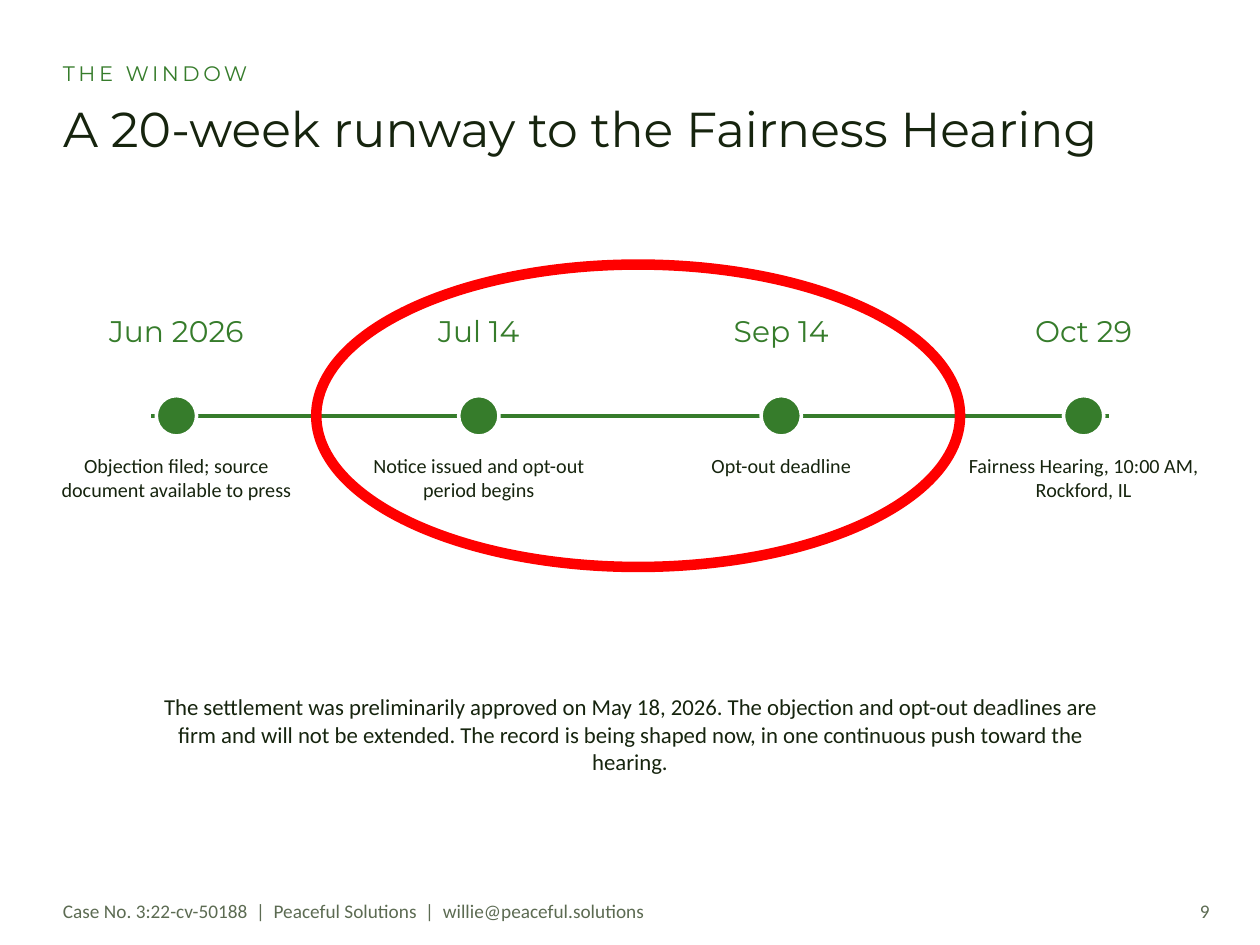
from pptx import Presentation
from pptx.dml.color import RGBColor
from pptx.enum.shapes import MSO_CONNECTOR, MSO_SHAPE
from pptx.enum.text import MSO_ANCHOR, MSO_AUTO_SIZE, PP_ALIGN
from pptx.oxml.ns import qn
from pptx.util import Inches, Pt
from lxml import etree

LEFT, CENTER, RIGHT = PP_ALIGN.LEFT, PP_ALIGN.CENTER, PP_ALIGN.RIGHT
TOP, MIDDLE = MSO_ANCHOR.TOP, MSO_ANCHOR.MIDDLE
OVAL = MSO_SHAPE.OVAL
STRAIGHT = MSO_CONNECTOR.STRAIGHT
NO_AUTOFIT = MSO_AUTO_SIZE.NONE

HEAD_FONT, BODY_FONT = "Montserrat", "Calibri"
GREEN, INK, MUTED = "367C2B", "16240E", "5C6B52"
WHITE, RED = "FFFFFF", "FF0000"

# Timeline geometry in inches
FIRST_X, STEP, AXIS_Y, DOT = 1.4, 2.4, 3.3, 0.32
MILESTONES = [
    ("Jun 2026", "Objection filed; source document available to press"),
    ("Jul 14", "Notice issued and opt-out period begins"),
    ("Sep 14", "Opt-out deadline"),
    ("Oct 29", "Fairness Hearing, 10:00 AM, Rockford, IL"),
]


def color(value):
    return RGBColor.from_string(value)


def set_text(s, text, size, font, ink, align=LEFT, anchor=TOP):
    tf = s.text_frame
    tf.word_wrap = True
    tf.auto_size = NO_AUTOFIT
    tf.vertical_anchor = anchor
    tf.margin_left = tf.margin_right = tf.margin_top = tf.margin_bottom = 0
    p = tf.paragraphs[0]
    p.text = text
    p.alignment = align
    p.font.size = Pt(size)
    p.font.name = font
    p.font.color.rgb = color(ink)
    return p


def add_text(sp, x, y, w, h, *args, **kwargs):
    s = sp.add_textbox(Inches(x), Inches(y), Inches(w), Inches(h))
    return set_text(s, *args, **kwargs)


def add_oval(sp, x, y, w, h, line, width, fill=None):
    s = sp.add_shape(OVAL, Inches(x), Inches(y), Inches(w), Inches(h))
    s.shadow.inherit = False
    if fill:
        s.fill.solid()
        s.fill.fore_color.rgb = color(fill)
    else:
        s.fill.background()
    s.line.color.rgb = color(line)
    s.line.width = Pt(width)


def add_axis(sp, x1, x2, y):
    s = sp.add_connector(STRAIGHT, Inches(x1), Inches(y), Inches(x2), Inches(y))
    s.line.color.rgb = color(GREEN)
    s.line.width = Pt(2.5)
    etree.SubElement(s._element.spPr, qn("a:effectLst"))


def add_milestone(sp, x, date, event):
    add_oval(sp, x - DOT / 2, AXIS_Y - DOT / 2, DOT, DOT, WHITE, 2, GREEN)
    add_text(sp, x - 1, 2.35, 2, 0.55, date, 17, HEAD_FONT, GREEN, CENTER, MIDDLE)
    add_text(sp, x - 1.05, 3.6, 2.1, 1.2, event, 11.5, BODY_FONT, INK, CENTER)


def main():
    prs = Presentation()
    prs.slide_width, prs.slide_height = Inches(10), Inches(7.5)
    slide = prs.slides.add_slide(prs.slide_layouts[5])
    sp = slide.shapes

    # Heading
    p = add_text(sp, 0.5, 0.42, 9, 0.32, "THE WINDOW", 12, HEAD_FONT, GREEN, anchor=MIDDLE)
    p.runs[0].font._element.set("spc", "200")
    title = sp.title
    title.left, title.top = Inches(0.5), Inches(0.78)
    title.width, title.height = Inches(9), Inches(0.9)
    set_text(title, "A 20-week runway to the Fairness Hearing", 28, HEAD_FONT, INK)

    # Timeline
    add_axis(sp, 1.2, 8.8, AXIS_Y)
    for i, (date, event) in enumerate(MILESTONES):
        add_milestone(sp, FIRST_X + i * STEP, date, event)

    # Closing statement
    add_text(sp, 1.2, 5.5, 7.6, 1,
             "The settlement was preliminarily approved on May 18, 2026. "
             "The objection and opt-out deadlines are firm and will not be extended. "
             "The record is being shaped now, in one continuous push toward the hearing.",
             13, BODY_FONT, INK, CENTER)

    # Footer
    add_text(sp, 0.5, 7.08, 8.4, 0.3,
             "Case No. 3:22-cv-50188  |  Peaceful Solutions  |  willie@peaceful.solutions",
             11, BODY_FONT, MUTED, anchor=MIDDLE)
    add_text(sp, 9.1, 7.08, 0.5, 0.3, "9", 11, BODY_FONT, MUTED, RIGHT, MIDDLE)

    # Ring around the opt-out window
    add_oval(sp, 2.51, 2.1, 5.11, 2.4, RED, 6)

    prs.save("out.pptx")


if __name__ == "__main__":
    main()
